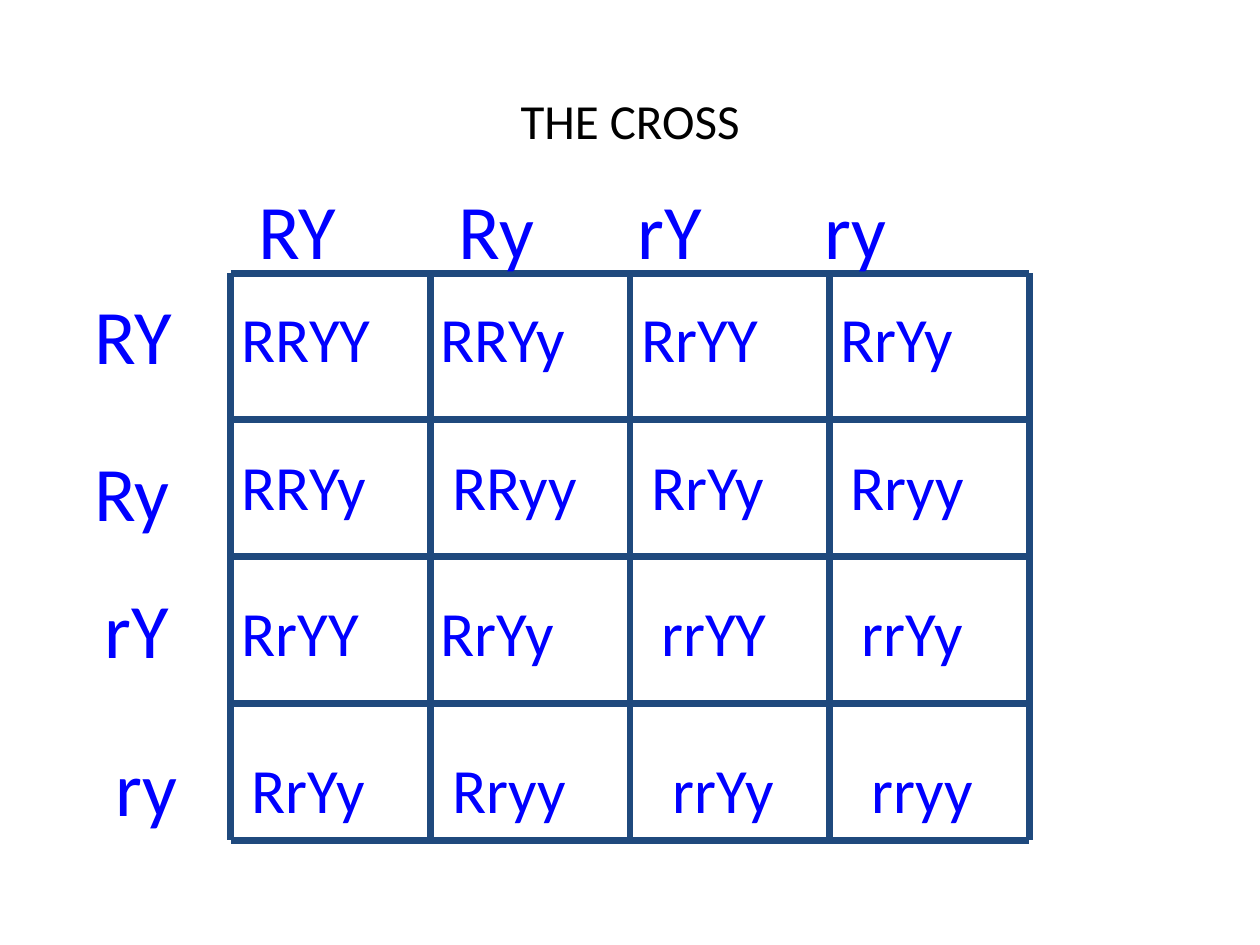
"""Build a slide with the Punnett square of a dihybrid cross."""
from dataclasses import dataclass
from itertools import pairwise

from lxml import etree
from pptx import Presentation
from pptx.dml.color import RGBColor
from pptx.enum.shapes import MSO_CONNECTOR
from pptx.enum.text import MSO_ANCHOR, PP_ALIGN
from pptx.oxml.ns import qn
from pptx.util import Pt

STRAIGHT = MSO_CONNECTOR.STRAIGHT
MIDDLE = MSO_ANCHOR.MIDDLE
LEFT, CENTER = PP_ALIGN.LEFT, PP_ALIGN.CENTER
PX = 9144
TITLE_ONLY = 5

GAMETES = ["RY", "Ry", "rY", "ry"]
GRID_XS = [183, 342, 500, 658, 817]
GRID_YS = [217, 333, 442, 558, 667]
LABEL_TOPS = [223, 348, 457, 582]
LABEL_INDENTS = [0, 0, 1, 2]
CELL_TOPS = [233, 350, 466, 591]
CELL_INDENTS = [(0, 0, 0, 0), (0, 1, 1, 1), (0, 0, 2, 2), (1, 1, 3, 3)]
CELL_LEFT, CELL_STEP, INDENT = 182, 475 / 3, 25 / 3


@dataclass(frozen=True)
class Theme:
    """Hold the colours and type sizes."""

    font: str = "Calibri"
    title_color: str = "000000"
    allele_color: str = "0000FF"
    grid_color: str = "1F497D"
    title_size: int = 28
    gamete_size: int = 44
    genotype_size: int = 36
    grid_weight: int = 4


def write_text(paragraph, text, *, font, size, color, align=LEFT):
    """Add one formatted span to a paragraph."""
    paragraph.alignment = align
    span = paragraph.add_run()
    span.text = text
    span.font.name = font
    span.font.size = Pt(size)
    span.font.color.rgb = RGBColor.from_string(color)


def cross(first, second):
    """Return the genotype of two gametes, dominant alleles first."""
    return "".join(allele for locus in zip(first, second) for allele in sorted(locus))


def text_width(text, full, r_saving, y_saving):
    """Return the box width, narrower for each recessive allele."""
    return full - r_saving * text.count("r") - y_saving * text.count("y")


class SlideBuilder:
    """Hold the theme and the current slide."""

    def __init__(self, slide, theme):
        """Keep the slide and its theme."""
        self.slide = slide
        self.theme = theme

    def title(self, text, left, top, width, height):
        """Place the title placeholder."""
        box = self.slide.shapes.title
        box.left, box.top, box.width, box.height = (
            length * PX for length in (left, top, width, height))
        box.text_frame.vertical_anchor = MIDDLE
        write_text(box.text_frame.paragraphs[0], text, font=self.theme.font,
                   size=self.theme.title_size, color=self.theme.title_color, align=CENTER)

    def label(self, text, left, top, width, height, size, inset=10, tabs=()):
        """Add allele letters, spread over tab stops if given."""
        box = self.slide.shapes.add_textbox(
            *(length * PX for length in (left, top, width, height)))
        frame = box.text_frame
        frame.word_wrap = True
        frame.margin_left = inset * PX
        paragraph = frame.paragraphs[0]
        if tabs:
            properties = paragraph._p.get_or_add_pPr()
            stops = etree.SubElement(properties, qn("a:tabLst"))
            for position in tabs:
                etree.SubElement(stops, qn("a:tab"), pos=str(position * PX), algn="l")
        write_text(paragraph, text, font=self.theme.font, size=size,
                   color=self.theme.allele_color)

    def grid(self, xs, ys):
        """Draw the grid lines, each in two halves that meet at the centre."""
        for start, end in pairwise(ys[::2]):
            for x in xs:
                self.line(x, start, x, end)
        for start, end in pairwise(xs[::2]):
            for y in ys:
                self.line(start, y, end, y)

    def line(self, *ends):
        """Add one grid line."""
        line = self.slide.shapes.add_connector(STRAIGHT, *(end * PX for end in ends))
        line.line.color.rgb = RGBColor.from_string(self.theme.grid_color)
        line.line.width = Pt(self.theme.grid_weight)
        etree.SubElement(line._element.spPr, qn("a:effectLst"))


def main():
    """Build and save the deck."""
    theme = Theme()
    deck = Presentation()
    deck.slide_width, deck.slide_height = 1000 * PX, 750 * PX
    page = SlideBuilder(deck.slides.add_slide(deck.slide_layouts[TITLE_ONLY]), theme)

    page.title("THE CROSS", 75, 33, 850, 125)
    page.grid(GRID_XS, GRID_YS)

    page.label("\t".join(GAMETES), 182, 140, 612, 83, theme.gamete_size,
               inset=23, tabs=(159, 301, 449))
    for gamete, top, indent in zip(GAMETES, LABEL_TOPS, LABEL_INDENTS):
        page.label(gamete, round(65 + indent * INDENT), top,
                   text_width(gamete, 105, 20, 14), 83, theme.gamete_size)

    for row_gamete, top, indents in zip(GAMETES, CELL_TOPS, CELL_INDENTS):
        for column, (gamete, indent) in enumerate(zip(GAMETES, indents)):
            genotype = cross(row_gamete, gamete)
            left = round(CELL_LEFT + column * CELL_STEP + indent * INDENT)
            page.label(genotype, left, top, text_width(genotype, 159, 17, 11), 70,
                       theme.genotype_size)

    deck.save("out.pptx")


if __name__ == "__main__":
    main()
